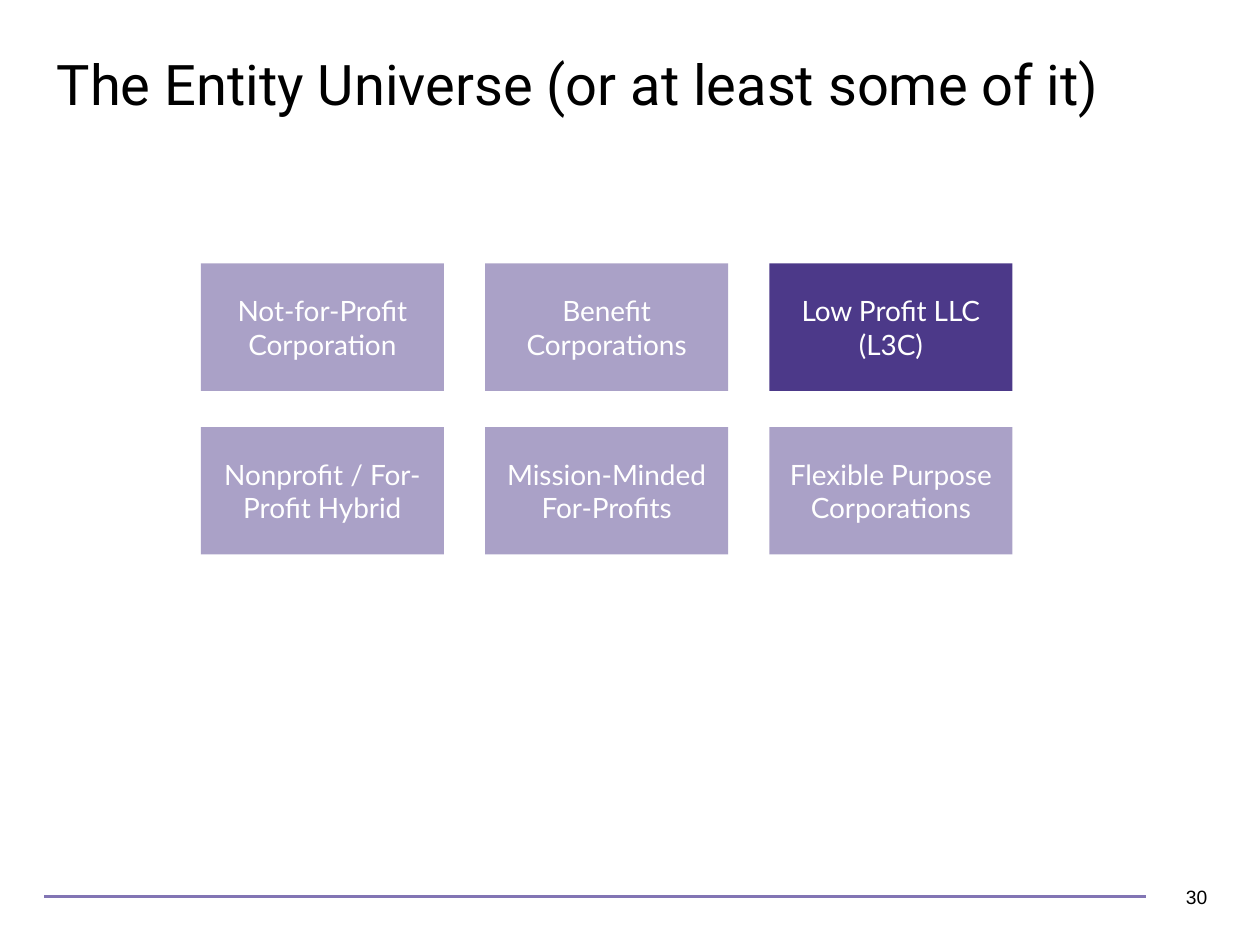
from lxml import etree
from pptx import Presentation
from pptx import util as u
from pptx.dml.color import RGBColor
from pptx.enum import shapes, text
from pptx.oxml.ns import qn

PURPLE = "4C3989"
ENTITIES = [
    ["Not-for-Profit Corporation", "Benefit Corporations", "Low Profit LLC (L3C)"],
    ["Nonprofit / For-Profit Hybrid", "Mission-Minded For-Profits",
     "Flexible Purpose Corporations"],
]
HIGHLIGHT = "Low Profit LLC (L3C)"


def paint(color_owner, hex_color):
    """Apply a hex colour to a solid fill or a font."""
    color = getattr(color_owner, "fore_color", None) or color_owner.color
    color.rgb = RGBColor.from_string(hex_color)


def write(sp, content, font, size, color, align, anchor):
    """Put one formatted paragraph into a shape."""
    tf = sp.text_frame
    tf.text = content
    tf.word_wrap = True
    tf.auto_size = text.MSO_AUTO_SIZE.NONE
    tf.vertical_anchor = anchor
    p = tf.paragraphs[0]
    p.alignment = align
    r = p.runs[0]
    r.font.name, r.font.size = font, u.Pt(size)
    paint(r.font, color)
    return p


def add_title(s, x, y, w, h):
    """Place the slide title in its placeholder."""
    sp = s.shapes.title
    sp.left, sp.top, sp.width, sp.height = u.Cm(x), u.Cm(y), u.Cm(w), u.Cm(h)
    p = write(sp, "The Entity Universe (or at least some of it)", "Roboto", 32,
              "000000", text.PP_ALIGN.LEFT, text.MSO_ANCHOR.TOP)
    p.line_spacing = 0.9


def add_entity(s, name, x, y, w, h):
    """Add one entity box, faded unless it is the highlighted one."""
    sp = s.shapes.add_shape(shapes.MSO_SHAPE.RECTANGLE,
                            u.Cm(x), u.Cm(y), u.Cm(w), u.Cm(h))
    sp.shadow.inherit = False
    sp.line.fill.background()
    sp.fill.solid()
    paint(sp.fill, PURPLE)
    if name != HIGHLIGHT:
        clr = sp.fill._xPr.find(qn("a:solidFill"))[0]
        etree.SubElement(clr, qn("a:alpha")).set("val", "47000")
    write(sp, name, "Lato", 16, "FFFFFF", text.PP_ALIGN.CENTER,
          text.MSO_ANCHOR.MIDDLE)


def add_entity_grid(s, x, y, w, h, gap_x=0.83, gap_y=0.73):
    """Fill a box with the evenly spaced grid of entities."""
    rows, cols = len(ENTITIES), len(ENTITIES[0])
    cell_w = (w - gap_x * (cols - 1)) / cols
    cell_h = (h - gap_y * (rows - 1)) / rows
    for i, row in enumerate(ENTITIES):
        for j, name in enumerate(row):
            add_entity(s, name, x + j * (cell_w + gap_x),
                       y + i * (cell_h + gap_y), cell_w, cell_h)


def add_footer(s, x, y, w, h):
    """Add the footer rule and the page number at its right end."""
    mid, num_w = y + h / 2, 2.08
    rule = s.shapes.add_connector(shapes.MSO_CONNECTOR.STRAIGHT, u.Cm(x), u.Cm(mid),
                                  u.Cm(x + w - 1.48), u.Cm(mid))
    rule.line.width = u.Pt(1.75)
    rule.line.fill.solid()
    paint(rule.line.fill, "8275B4")
    etree.SubElement(rule._element.spPr, qn("a:effectLst"))
    sp = s.shapes.add_textbox(u.Cm(x + w - num_w), u.Cm(y), u.Cm(num_w), u.Cm(h))
    write(sp, "30", "Arial", 11, "000000", text.PP_ALIGN.RIGHT,
          text.MSO_ANCHOR.MIDDLE)


def main():
    """Build the slide and save it."""
    prs = Presentation()
    prs.slide_width, prs.slide_height = u.Cm(25.4), u.Cm(19.05)
    s = prs.slides.add_slide(prs.slide_layouts[5])
    add_title(s, 0.89, 1.02, 23.72, 2.06)
    add_footer(s, 0.89, 17.56, 23.7, 1.02)
    add_entity_grid(s, 4.05, 5.31, 16.36, 5.87)
    prs.save("out.pptx")


if __name__ == "__main__":
    main()
